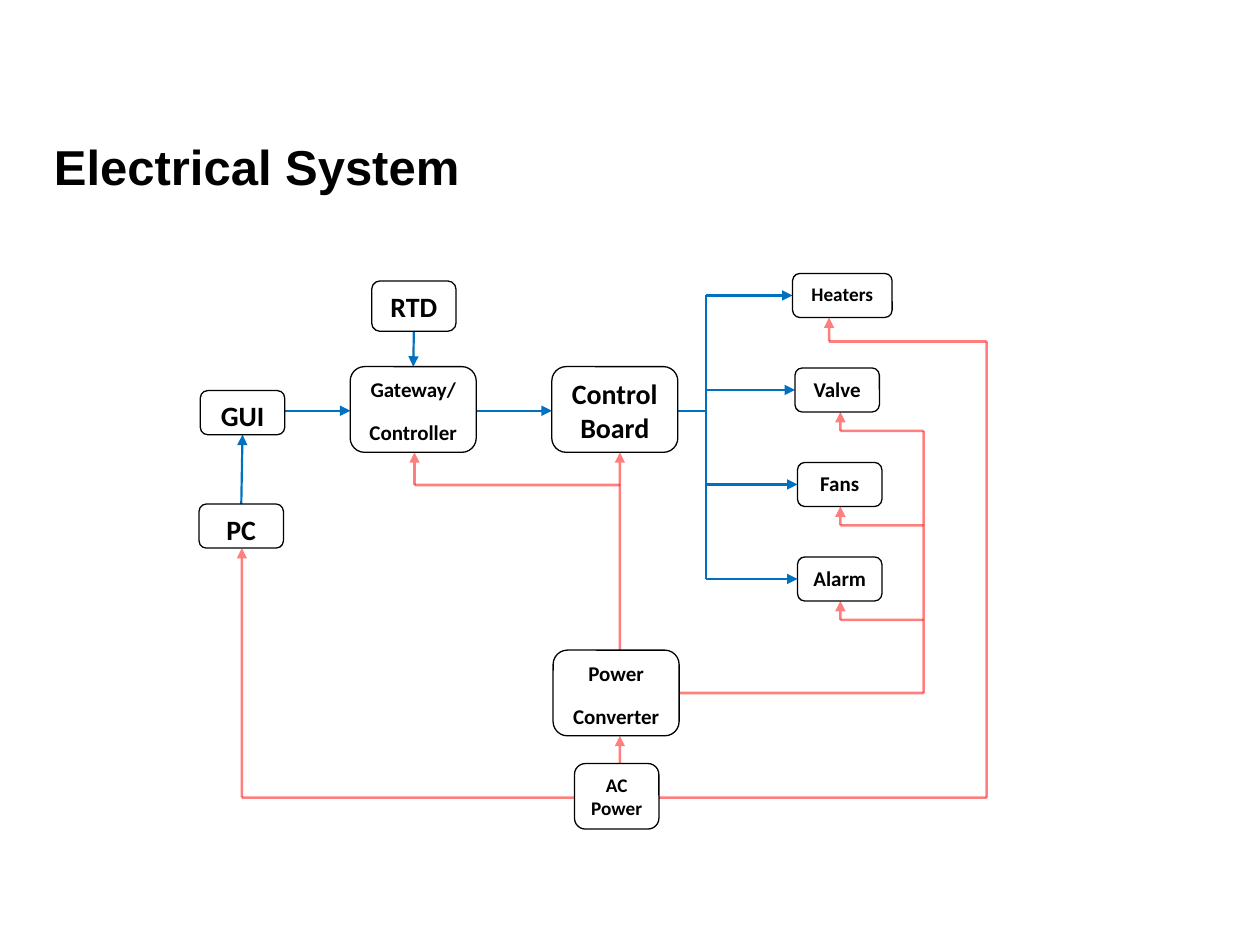
from dataclasses import dataclass
from itertools import pairwise

from pptx import Presentation
from pptx.dml.color import RGBColor
from pptx.enum import shapes, text
from pptx.oxml.ns import qn
from pptx.util import Inches, Pt
from lxml import etree


@dataclass(frozen=True)
class Theme:
    black: str = "000000"
    white: str = "FFFFFF"
    signal: str = "0070C0"
    power: str = "FF0000"
    title_font: str = "Arial"
    node_font: str = "Calibri"
    title: float = 28
    large: float = 16
    medium: float = 12
    small: float = 11
    outline: float = 0.75
    signal_width: float = 1.25
    power_width: float = 1.5


T = Theme()

# Nodes: left, top, width, height within the diagram, type size
NODES = {
    "RTD": (1.37, 0.06, 0.67, 0.4, T.large),
    "GUI": (0.01, 0.93, 0.67, 0.35, T.large),
    "PC": (0, 1.83, 0.67, 0.35, T.large),
    "Gateway/\nController": (1.2, 0.74, 1, 0.68, T.medium),
    "Control Board": (2.8, 0.74, 1, 0.68, T.large),
    "Power\nConverter": (2.81, 2.99, 1, 0.68, T.medium),
    "AC Power": (2.98, 3.89, 0.67, 0.52, T.small),
    "Heaters": (4.71, 0, 0.79, 0.35, T.small),
    "Valve": (4.73, 0.75, 0.67, 0.35, T.medium),
    "Fans": (4.75, 1.5, 0.67, 0.35, T.medium),
    "Alarm": (4.75, 2.25, 0.67, 0.35, T.medium),
}


def write(tf, content, *, font, size, align=None, after=None, spacing=None):
    tf.word_wrap = True
    for i, line in enumerate(content.split("\n")):
        p = tf.add_paragraph() if i else tf.paragraphs[0]
        p.alignment, p.line_spacing = align, spacing
        if after is not None:
            p.space_after = Pt(after)
        r = p.add_run()
        r.text = line
        r.font.name, r.font.size, r.font.bold = font, Pt(size), True
        r.font.color.rgb = RGBColor.from_string(T.black)


def add_title(s, x, y, w, h):
    tf = s.shapes.add_textbox(Inches(x), Inches(y), Inches(w), Inches(h)).text_frame
    tf.vertical_anchor = text.MSO_ANCHOR.MIDDLE
    write(tf, "Electrical System", font=T.title_font, size=T.title, spacing=0.9)


def add_node(s, label, x, y, w, h, size):
    sp = s.shapes.add_shape(shapes.MSO_SHAPE.ROUNDED_RECTANGLE,
                            Inches(x), Inches(y), Inches(w), Inches(h))
    sp.shadow.inherit = False
    sp.fill.solid()
    sp.fill.fore_color.rgb = RGBColor.from_string(T.white)
    sp.line.color.rgb = RGBColor.from_string(T.black)
    sp.line.width = Pt(T.outline)
    sp.text_frame.vertical_anchor = text.MSO_ANCHOR.TOP
    write(sp.text_frame, label, font=T.node_font, size=size,
          align=text.PP_ALIGN.CENTER, after=10)


def add_wire(s, points, color, width, alpha=None, arrow=True):
    """Join the points with straight segments; the last one may carry an arrowhead."""
    for (x1, y1), (x2, y2) in pairwise(points):
        c = s.shapes.add_connector(shapes.MSO_CONNECTOR.STRAIGHT,
                                   Inches(x1), Inches(y1), Inches(x2), Inches(y2))
        c.line.color.rgb = RGBColor.from_string(color)
        c.line.width = Pt(width)
        etree.SubElement(c._element.spPr, qn("a:effectLst"))
        ln = c.line._get_or_add_ln()
        if alpha:
            clr = ln.find(qn("a:solidFill"))[0]
            etree.SubElement(clr, qn("a:alpha"), val=str(alpha * 1000))
    if arrow:
        etree.SubElement(ln, qn("a:tailEnd"), type="triangle")


def add_diagram(s, x, y):
    def edge(label, side):
        nx, ny, w, h, _ = NODES[label]
        fx, fy = {"l": (0, 0.5), "r": (1, 0.5), "t": (0.5, 0), "b": (0.5, 1)}[side]
        return nx + fx * w, ny + fy * h

    def shifted(points):
        return [(x + px, y + py) for px, py in points]

    def signal(*points, arrow=True):
        add_wire(s, shifted(points), T.signal, T.signal_width, arrow=arrow)

    def power(*points, arrow=True):
        add_wire(s, shifted(points), T.power, T.power_width, alpha=50, arrow=arrow)

    gateway, board, converter = "Gateway/\nController", "Control Board", "Power\nConverter"
    row, bus, supply, outer, riser = 1.09, 4.02, 5.75, 6.25, 3.34
    mains = edge("AC Power", "r")[1] + 0.01

    # Power wires
    power((3.65, mains), (outer, mains), (outer, 0.54), (5, 0.54), (5, 0.35))
    power((2.98, mains), (0.34, mains), (0.34, 2.18))
    power((riser, 3.89), (riser, 3.67))
    power((riser, 2.99), (riser, 1.68), (riser, 1.42))
    power((riser, 1.68), (1.71, 1.68), (1.71, 1.42))
    power(edge(converter, "r"), (supply, 3.33), (supply, 1.25), arrow=False)
    for label in ("Valve", "Fans", "Alarm"):
        bottom = edge(label, "b")[1]
        power((supply, bottom + 0.15), (5.09, bottom + 0.15), (5.09, bottom))

    # Signal wires
    signal(edge("RTD", "b"), edge(gateway, "t"))
    signal(edge("PC", "t"), edge("GUI", "b"))
    for start, end in (("GUI", gateway), (gateway, board)):
        signal((edge(start, "r")[0], row), (edge(end, "l")[0], row))
    signal((edge(board, "r")[0], row), (bus, row), arrow=False)
    signal((bus, edge("Heaters", "l")[1]), (bus, edge("Alarm", "l")[1]), arrow=False)
    for label in ("Heaters", "Valve", "Fans", "Alarm"):
        end = edge(label, "l")
        signal((bus, end[1]), end)

    # Boxes
    for label, (nx, ny, w, h, size) in NODES.items():
        add_node(s, label, x + nx, y + ny, w, h, size)


def main():
    prs = Presentation()
    prs.slide_width, prs.slide_height = Inches(10), Inches(7.5)
    s = prs.slides.add_slide(prs.slide_layouts[6])
    add_title(s, 0.33, 1.08, 7.92, 0.53)
    add_diagram(s, 1.58, 2.17)
    prs.save("out.pptx")


if __name__ == "__main__":
    main()
